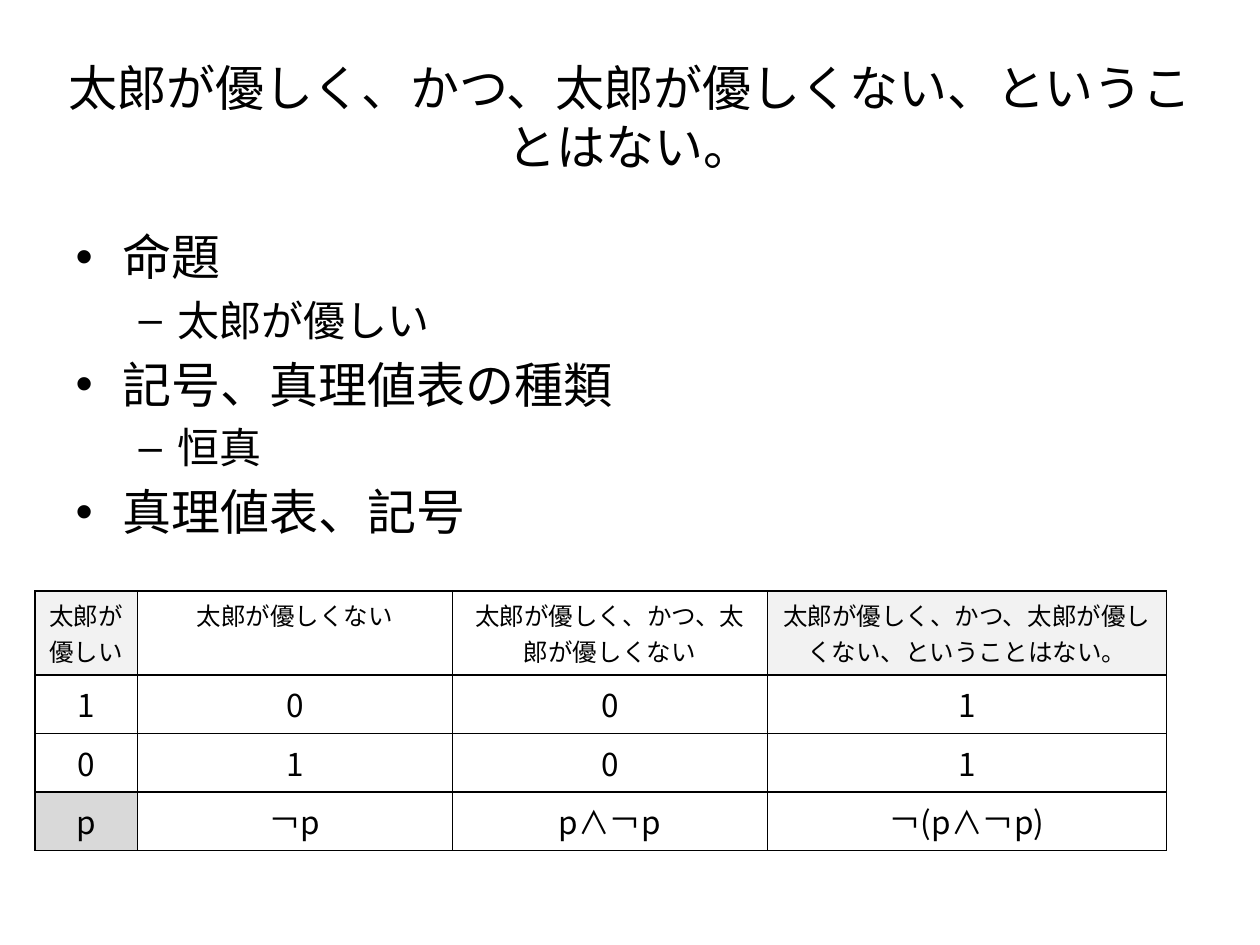
from dataclasses import dataclass
from lxml.etree import SubElement
from pptx import Presentation
from pptx.dml.color import RGBColor
from pptx.enum.text import MSO_ANCHOR, MSO_AUTO_SIZE, PP_ALIGN
from pptx.oxml.ns import qn
from pptx.util import Pt


@dataclass(frozen=True)
class Theme:
    font: str = "Noto Sans CJK JP"
    ink: str = "000000"
    pale: str = "F2F2F2"
    grey: str = "D9D9D9"
    title: int = 28
    list: tuple = (28, 24)
    head: int = 14
    cell: int = 18
    rule: int = 1


@dataclass(frozen=True)
class Box:
    left: float
    top: float
    width: float
    height: float


@dataclass(frozen=True)
class Item:
    text: str
    level: int = 0


THEME = Theme()
TITLE = "太郎が優しく、かつ、太郎が優しくない、ということはない。"
ITEMS = [
    Item("命題"),
    Item("太郎が優しい", 1),
    Item("記号、真理値表の種類"),
    Item("恒真", 1),
    Item("真理値表、記号"),
]
ROWS = [
    ["太郎が優しい", "太郎が優しくない", "太郎が優しく、かつ、太郎が優しくない", TITLE],
    ["1", "0", "0", "1"],
    ["0", "1", "0", "1"],
    ["p", "￢p", "p∧￢p", "￢(p∧￢p)"],
]
FILLS = {(0, 0): THEME.pale, (0, 3): THEME.pale, (3, 0): THEME.grey}
WIDTHS = [58.5, 180, 180, 228]
HEIGHTS = [48, 33.4, 33.4, 33.4]


def style(para, size: int) -> None:
    font = para.font
    font.size = Pt(size)
    font.name = THEME.font
    font.color.rgb = RGBColor.from_string(THEME.ink)
    props = para._p.get_or_add_pPr().find(qn("a:defRPr"))
    SubElement(props, qn("a:ea"), typeface=THEME.font)


def place(shape, box: Box) -> None:
    shape.left, shape.top = Pt(box.left), Pt(box.top)
    shape.width, shape.height = Pt(box.width), Pt(box.height)
    shape.text_frame.auto_size = MSO_AUTO_SIZE.NONE


def border(cell) -> None:
    props = cell._tc.get_or_add_tcPr()
    for side in ("lnL", "lnR", "lnT", "lnB"):
        line = SubElement(props, qn(f"a:{side}"), w=str(Pt(THEME.rule)))
        fill = SubElement(line, qn("a:solidFill"))
        SubElement(fill, qn("a:srgbClr"), val=THEME.ink)


def add_title(slide) -> None:
    shape = slide.shapes.title
    place(shape, Box(20, 21.6, 680, 90))
    frame = shape.text_frame
    frame.text = TITLE
    frame.vertical_anchor = MSO_ANCHOR.MIDDLE
    para = frame.paragraphs[0]
    para.alignment = PP_ALIGN.CENTER
    style(para, THEME.title)


def add_list(slide, items: list[Item]) -> None:
    shape = slide.placeholders[1]
    place(shape, Box(36, 126, 648, 356.4))
    frame = shape.text_frame
    frame.text = "\n".join(item.text for item in items)
    for para, item in zip(frame.paragraphs, items):
        para.level = item.level
        style(para, THEME.list[item.level])


def add_grid(slide, rows: list[list[str]]) -> None:
    table = slide.shapes.add_table(
        len(rows), len(WIDTHS), Pt(20), Pt(337.7), Pt(sum(WIDTHS)), Pt(sum(HEIGHTS))
    ).table
    table.first_row = table.horz_banding = False
    for col, width in zip(table.columns, WIDTHS):
        col.width = Pt(width)
    for row, high in zip(table.rows, HEIGHTS):
        row.height = Pt(high)
    for i, row in enumerate(rows):
        for j, text in enumerate(row):
            cell = table.cell(i, j)
            cell.text = text
            para = cell.text_frame.paragraphs[0]
            para.alignment = PP_ALIGN.CENTER
            style(para, THEME.cell if i else THEME.head)
            border(cell)
            if (i, j) in FILLS:
                cell.fill.solid()
                cell.fill.fore_color.rgb = RGBColor.from_string(FILLS[i, j])
            else:
                cell.fill.background()


def main() -> None:
    deck = Presentation()
    deck.slide_width, deck.slide_height = Pt(720), Pt(540)
    slide = deck.slides.add_slide(deck.slide_layouts[1])
    add_title(slide)
    add_list(slide, ITEMS)
    add_grid(slide, ROWS)
    deck.save("out.pptx")


if __name__ == "__main__":
    main()
